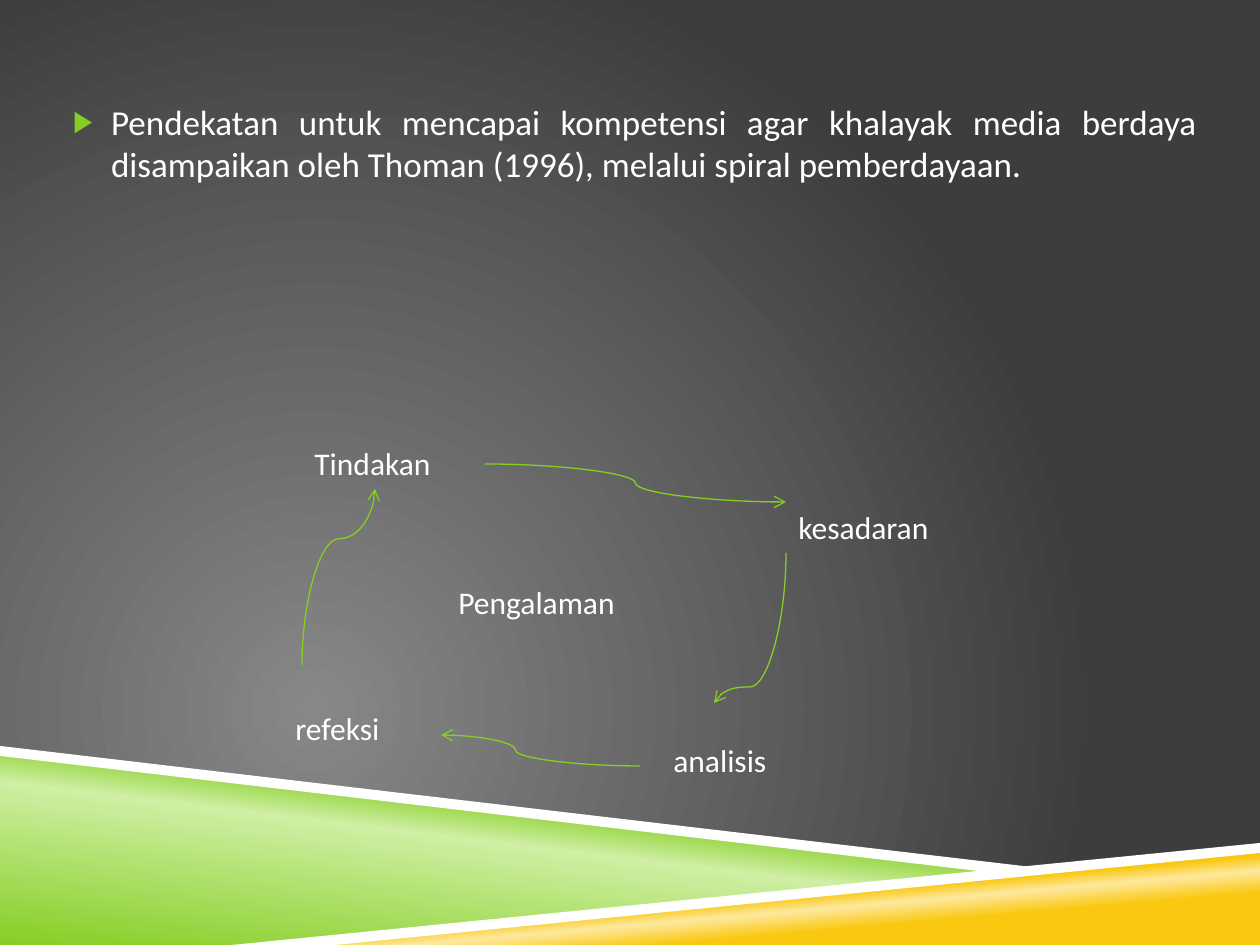
import pptx
import pptx.util
import pptx.dml.color
import pptx.enum.shapes
import pptx.enum.text
import pptx.oxml.ns
import lxml.etree

RGBColor = pptx.dml.color.RGBColor
WHITE = RGBColor(0xFF, 0xFF, 0xFF)
GREEN = RGBColor(0x86, 0xCE, 0x24)
PALE_GREEN = RGBColor(0xCF, 0xEF, 0xA4)
YELLOW = RGBColor(0xFA, 0xC8, 0x10)
PALE_YELLOW = RGBColor(0xFD, 0xE9, 0x9F)
LIGHT_GREY = RGBColor(0x87, 0x87, 0x87)
DARK_GREY = RGBColor(0x3D, 0x3D, 0x3D)

PX = 914400 / 126
LEFT = pptx.enum.text.PP_ALIGN.LEFT
JUSTIFY = pptx.enum.text.PP_ALIGN.JUSTIFY
qn = pptx.oxml.ns.qn
sub = lxml.etree.SubElement


def write(frame, text, size=18, align=LEFT, color=WHITE, font="Calibri"):
    frame.word_wrap = True
    paragraph = frame.paragraphs[0]
    paragraph.alignment = align
    paragraph.space_before = pptx.util.Pt(0)
    run = paragraph.add_run()
    run.text = text
    run.font.size = pptx.util.Pt(size)
    run.font.name = font
    run.font.color.rgb = color


def set_gradient(owner, fill, stops, angle=None):
    """Linear at the given angle, or circular from the lower left without one."""
    fill.gradient()
    grad = owner._element.find(".//" + qn("a:gradFill"))
    grad.clear()
    stop_list = sub(grad, qn("a:gsLst"))
    for percent, color in stops:
        stop = sub(stop_list, qn("a:gs"), pos=str(percent * 1000))
        sub(stop, qn("a:srgbClr"), val=str(color))
    if angle is None:
        circle = sub(grad, qn("a:path"), path="circle")
        sub(circle, qn("a:fillToRect"), l="50000", t="100000", r="100000", b="50000")
    else:
        sub(grad, qn("a:lin"), ang=str(angle * 60000), scaled="0")


prs = pptx.Presentation()
prs.slide_width = round(1260 * PX)
prs.slide_height = round(945 * PX)
slide = prs.slides.add_slide(prs.slide_layouts[1])
shapes = slide.shapes
title = shapes.title._element
title.getparent().remove(title)

# Background
set_gradient(slide, slide.background.fill, [(0, LIGHT_GREY), (100, DARK_GREY)])

# Bands along the bottom: outline, gradient stops or plain colour, angle
green_stops = [(0, GREEN), (52, PALE_GREEN), (66, GREEN)]
yellow_stops = [(28, YELLOW), (40, PALE_YELLOW), (48, YELLOW)]
bands = [
    ([(0, 752), (998, 872), (252, 945), (0, 945)], green_stops, 277),
    ([(249, 945), (1260, 847), (1260, 945)], yellow_stops, 265),
    ([(0, 746), (0, 756), (995, 873), (1048, 869)], WHITE, None),
    ([(1260, 843), (232, 945), (335, 945), (1260, 853)], WHITE, None),
]
for outline, paint, angle in bands:
    builder = shapes.build_freeform(*outline[0], scale=PX)
    builder.add_line_segments(outline[1:], close=True)
    band = builder.convert_to_shape()
    band.shadow.inherit = False
    band.line.fill.background()
    if angle is None:
        band.fill.solid()
        band.fill.fore_color.rgb = paint
    else:
        set_gradient(band, band.fill, paint, angle)

# Opening statement, in front of the bands
statement = slide.placeholders[1]
shapes._spTree.append(statement._element)
statement.left, statement.top = round(63 * PX), round(94 * PX)
statement.width, statement.height = round(1134 * PX), round(750 * PX)
statement_frame = statement.text_frame
statement_frame.margin_left = statement_frame.margin_right = 0
bullet = statement_frame.paragraphs[0]._p.get_or_add_pPr()
bullet.set("marL", str(round(48 * PX)))
bullet.set("indent", str(round(-38 * PX)))
sub(sub(bullet, qn("a:buClr")), qn("a:srgbClr"), val=str(GREEN))
sub(bullet, qn("a:buSzPct"), val="85000")
sub(bullet, qn("a:buChar"), char="▶")
write(
    statement_frame,
    "Pendekatan untuk mencapai kompetensi agar khalayak media berdaya "
    "disampaikan oleh Thoman (1996), melalui spiral pemberdayaan.",
    size=20,
    align=JUSTIFY,
)

# Stages of the spiral: text, left, top, width
stages = [
    ("kesadaran", 786, 502, 210),
    ("analisis", 661, 735, 189),
    ("refeksi", 283, 703, 163),
    ("Tindakan", 302, 438, 170),
    ("Pengalaman", 446, 577, 215),
]
for text, left, top, width in stages:
    stage = shapes.add_textbox(*(round(v * PX) for v in (left, top, width, 50)))
    write(stage.text_frame, text)

# Arrows between stages: start, end, bend in per cent, leaves vertically
arrows = [
    ((786, 553), (714, 703), 89.3, True),
    ((640, 766), (441, 735), 62.4, False),
    ((302, 665), (375, 489), 71.7, True),
    ((485, 464), (786, 502), 50, False),
]
for (x1, y1), (x2, y2), bend, vertical in arrows:
    mid_x, mid_y = (x1 + x2) / 2, (y1 + y2) / 2
    half_x, half_y = (x2 - x1) / 2, (y2 - y1) / 2
    if vertical:  # laid out flat, then turned a quarter
        half_x, half_y = half_y, -half_x
    ends = (mid_x - half_x, mid_y - half_y, mid_x + half_x, mid_y + half_y)
    arrow = shapes.add_connector(
        pptx.enum.shapes.MSO_CONNECTOR.CURVE, *(round(v * PX) for v in ends)
    )
    arrow.line.color.rgb = GREEN
    arrow.line.width = pptx.util.Pt(0.75)
    properties = arrow._element.spPr
    if vertical:
        properties.find(qn("a:xfrm")).set("rot", str(90 * 60000))
    adjustments = properties.find(qn("a:prstGeom")).find(qn("a:avLst"))
    sub(adjustments, qn("a:gd"), name="adj1", fmla=f"val {round(bend * 1000)}")
    sub(properties.find(qn("a:ln")), qn("a:tailEnd"), type="arrow")
    sub(properties, qn("a:effectLst"))

prs.save("out.pptx")
